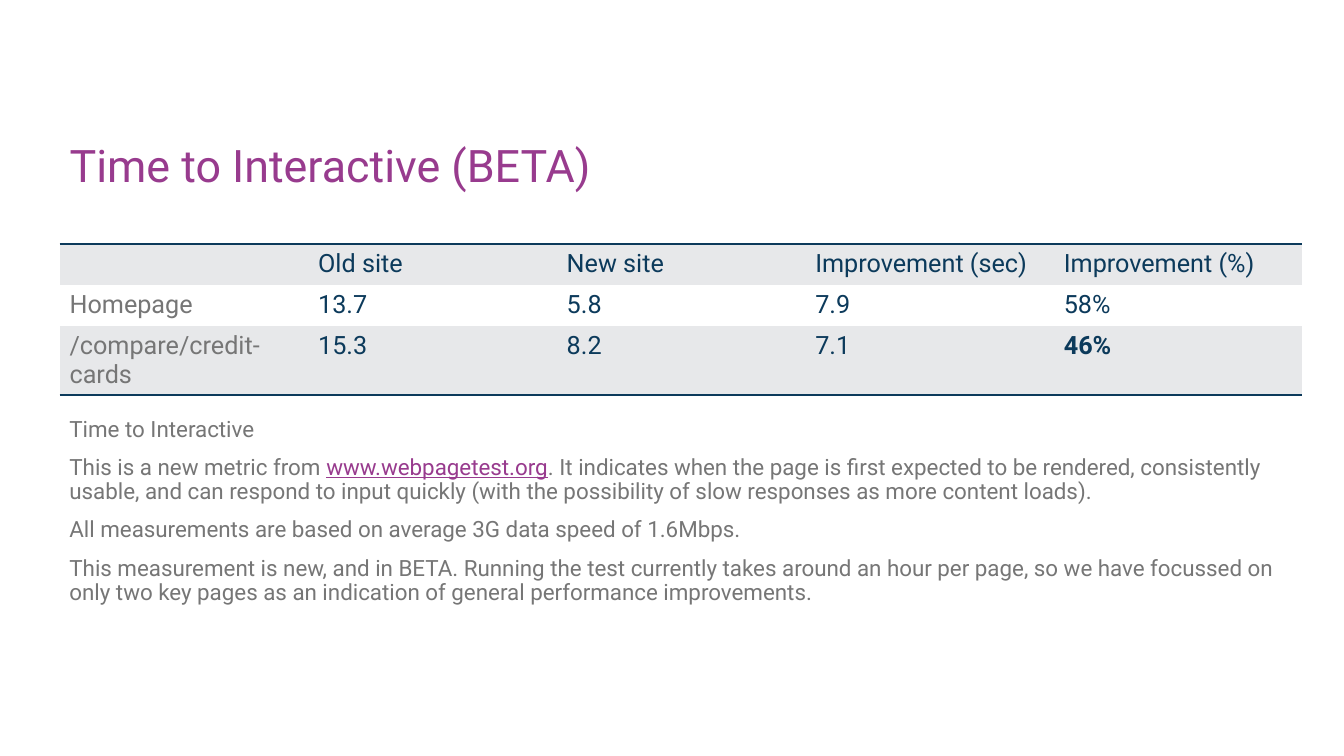
from lxml.etree import SubElement
from pptx import Presentation
from pptx.dml.color import RGBColor
from pptx.enum.text import MSO_ANCHOR, PP_ALIGN
from pptx.oxml.ns import qn
from pptx.util import Cm, Pt

PURPLE = RGBColor(0x98, 0x3B, 0x8E)
NAVY = RGBColor(0x0C, 0x3A, 0x5B)
GRAY = RGBColor(0x76, 0x76, 0x76)
BAND = RGBColor(0xE7, 0xE8, 0xEA)
WHITE = RGBColor(0xFF, 0xFF, 0xFF)
FONT = "Roboto"

TITLE = "Time to Interactive (BETA)"
ROWS = [
    ["", "Old site", "New site", "Improvement (sec)", "Improvement (%)"],
    ["Homepage", "13.7", "5.8", "7.9", "58%"],
    ["/compare/credit-cards", "15.3", "8.2", "7.1", "46%"],
]
BOLD_VALUE = "46%"
LINK = "www.webpagetest.org"
NOTES = [
    ["Time to Interactive"],
    ["This is a new metric from ", LINK,
     ". It indicates when the page is first expected to be rendered, consistently usable, "
     "and can respond to input quickly (with the possibility of slow responses as more "
     "content loads)."],
    ["All measurements are based on average 3G data speed of 1.6Mbps."],
    ["This measurement is new, and in BETA. Running the test currently takes around an hour "
     "per page, so we have focussed on only two key pages as an indication of general "
     "performance improvements."],
]

LEFT, WIDTH = Cm(1.5), Cm(31.32)
ROW_HEIGHT = Cm(1.03)


def style_font(font, size, color):
    font.name = FONT
    font.size = Pt(size)
    font.color.rgb = color


def set_borders(cell, ruled_sides):
    """Rule the given sides (among L, R, T, B) in navy and clear the others."""
    properties = cell._tc.get_or_add_tcPr()
    for side in "LRTB":
        line = SubElement(properties, qn(f"a:ln{side}"), w=str(Pt(2)))
        if side in ruled_sides:
            fill = SubElement(line, qn("a:solidFill"))
            SubElement(fill, qn("a:srgbClr"), val=str(NAVY))
        else:
            SubElement(line, qn("a:noFill"))


def add_title(slide):
    title = slide.shapes.title
    title.left, title.top, title.width, title.height = LEFT, Cm(3.18), WIDTH, Cm(1.8)
    frame = title.text_frame
    frame.text = TITLE
    frame.vertical_anchor = MSO_ANCHOR.BOTTOM
    paragraph = frame.paragraphs[0]
    paragraph.alignment = PP_ALIGN.LEFT
    paragraph.line_spacing = 0.9
    style_font(paragraph.runs[0].font, 32, PURPLE)


def add_results_table(slide):
    row_count, column_count = len(ROWS), len(ROWS[0])
    table = slide.shapes.add_table(
        row_count, column_count, LEFT, Cm(6.15), WIDTH, ROW_HEIGHT * row_count).table
    table.first_row = table.horz_banding = False
    for row_index, values in enumerate(ROWS):
        ruled_sides = {0: "T", row_count - 1: "B"}.get(row_index, "")
        for column_index, value in enumerate(values):
            cell = table.cell(row_index, column_index)
            set_borders(cell, ruled_sides)
            cell.fill.solid()
            cell.fill.fore_color.rgb = WHITE if row_index % 2 else BAND
            cell.text_frame.text = value
            font = cell.text_frame.paragraphs[0].font
            style_font(font, 18, NAVY if column_index else GRAY)
            for run in cell.text_frame.paragraphs[0].runs:
                style_font(run.font, 18, NAVY if column_index else GRAY)
                run.font.bold = value == BOLD_VALUE


def add_notes_text(slide):
    frame = slide.shapes.add_textbox(LEFT, Cm(10.41), WIDTH, Cm(6.63)).text_frame
    frame.word_wrap = True
    for index, pieces in enumerate(NOTES):
        paragraph = frame.add_paragraph() if index else frame.paragraphs[0]
        paragraph.line_spacing = 0.9
        paragraph.space_before = Pt(10 if index else 0)
        for piece in pieces:
            run = paragraph.add_run()
            run.text = piece
            style_font(run.font, 16, PURPLE if piece == LINK else GRAY)
            run.font.underline = piece == LINK


def main():
    presentation = Presentation()
    presentation.slide_width, presentation.slide_height = Cm(33.87), Cm(19.05)
    slide = presentation.slides.add_slide(presentation.slide_layouts[5])
    add_title(slide)
    add_results_table(slide)
    add_notes_text(slide)
    presentation.save("out.pptx")


if __name__ == "__main__":
    main()
